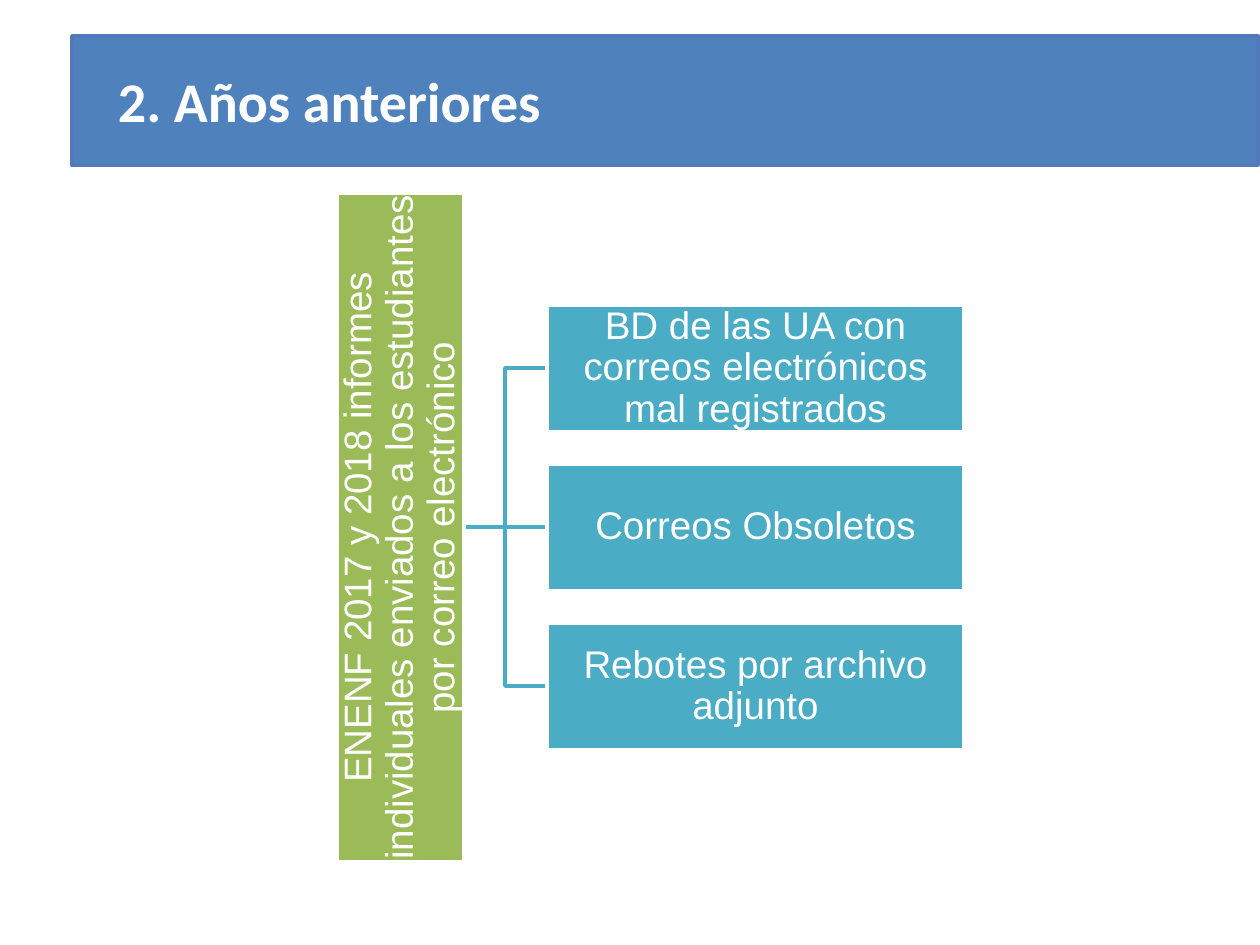
import pptx
import pptx.util
import pptx.dml.color
import pptx.enum.shapes
import pptx.enum.text
import lxml.etree

PX = 914400 // 126
WHITE, BLUE, EDGE, GREEN, TEAL = "FFFFFF", "4F81BD", "5179BB", "9BBB59", "4BACC6"
ALIGN = pptx.enum.text.PP_ALIGN


def color(code):
    return pptx.dml.color.RGBColor.from_string(code)


def stroke(line, code):
    line.color.rgb = color(code)
    line.width = pptx.util.Pt(2)


def block(slide, box, text, fill, edge, font, size, align, pad):
    """Draw a filled rectangle with text; pad is left, top, right, bottom."""
    kind = pptx.enum.shapes.MSO_SHAPE.RECTANGLE
    shape = slide.shapes.add_shape(kind, *(n * PX for n in box))
    shape.shadow.inherit = False
    shape.fill.solid()
    shape.fill.fore_color.rgb = color(fill)
    stroke(shape.line, edge)
    frame = shape.text_frame
    frame.text = text
    frame.word_wrap = True
    frame.vertical_anchor = pptx.enum.text.MSO_ANCHOR.MIDDLE
    (frame.margin_left, frame.margin_top,
     frame.margin_right, frame.margin_bottom) = (n * PX for n in pad)
    para = frame.paragraphs[0]
    para.alignment = align
    run = para.runs[0].font
    run.name, run.size = font, pptx.util.Pt(size)
    run.color.rgb = color(WHITE)
    return shape


def header(slide, box, text):
    shape = block(slide, box, text, BLUE, EDGE, "Calibri", 32, ALIGN.LEFT,
                  (46, 6, 13, 6))
    shape.text_frame.paragraphs[0].runs[0].font.bold = True


def node(slide, box, text, fill):
    shape = block(slide, box, text, fill, WHITE, "Arial", 22, ALIGN.CENTER,
                  (2, 2, 2, 2))
    shape.text_frame.paragraphs[0].line_spacing = 0.9
    return shape


def elbow(slide, start, end):
    """Draw an open line that turns halfway between start and end."""
    mid = (start[0] + end[0]) // 2
    path = slide.shapes.build_freeform(*start, scale=PX)
    path.add_line_segments([(mid, start[1]), (mid, end[1]), end], close=False)
    shape = path.convert_to_shape()
    shape.shadow.inherit = False
    shape.fill.background()
    stroke(shape.line, TEAL)


def straight(slide, start, end):
    kind = pptx.enum.shapes.MSO_CONNECTOR.STRAIGHT
    link = slide.shapes.add_connector(kind, *(n * PX for n in start + end))
    stroke(link.line, TEAL)
    props = link._element.spPr
    lxml.etree.SubElement(props, pptx.oxml.ns.qn("a:effectLst"))
    return link


def tree(slide, box, root, leaves):
    """Draw an upright root at the left and a column of leaves at the right."""
    left, top, wide, high = box
    thick, gap, space = 127, 83, 32
    step = thick + space
    mid = top + high // 2
    start = (left + thick, mid)
    edge = left + thick + gap
    rows = [mid + round((i - (len(leaves) - 1) / 2) * step)
            for i in range(len(leaves))]

    # Lines go first so that the white borders cover their ends.
    links = {}
    for row in rows:
        if row == mid:
            links[row] = straight(slide, start, (edge, row))
        else:
            elbow(slide, start, (edge, row))

    # The root is laid flat about its own centre and then turned.
    flat = (left + (thick - high) // 2, mid - thick // 2, high, thick)
    trunk = node(slide, flat, root, GREEN)
    trunk.rotation = 270

    for row, text in zip(rows, leaves):
        spot = (edge, row - thick // 2, wide - thick - gap, thick)
        leaf = node(slide, spot, text, TEAL)
        if row in links:
            link = links[row]
            link.begin_connect(trunk, 2)
            link.end_connect(leaf, 1)
            # Joining ignores the turn, so the ends are set again.
            link.begin_x, link.begin_y = (n * PX for n in start)
            link.end_x, link.end_y = edge * PX, row * PX


def main():
    deck = pptx.Presentation()
    deck.slide_width = pptx.util.Inches(10)
    deck.slide_height = pptx.util.Inches(7.5)
    slide = deck.slides.add_slide(deck.slide_layouts[6])
    header(slide, (72, 36, 1186, 129), "2. Años anteriores")
    tree(slide, (337, 193, 627, 669),
         "ENENF 2017 y 2018 informes individuales enviados a los estudiantes "
         "por correo electrónico",
         ["BD de las UA con correos electrónicos mal registrados",
          "Correos Obsoletos",
          "Rebotes por archivo adjunto"])
    deck.save("out.pptx")


if __name__ == "__main__":
    main()
